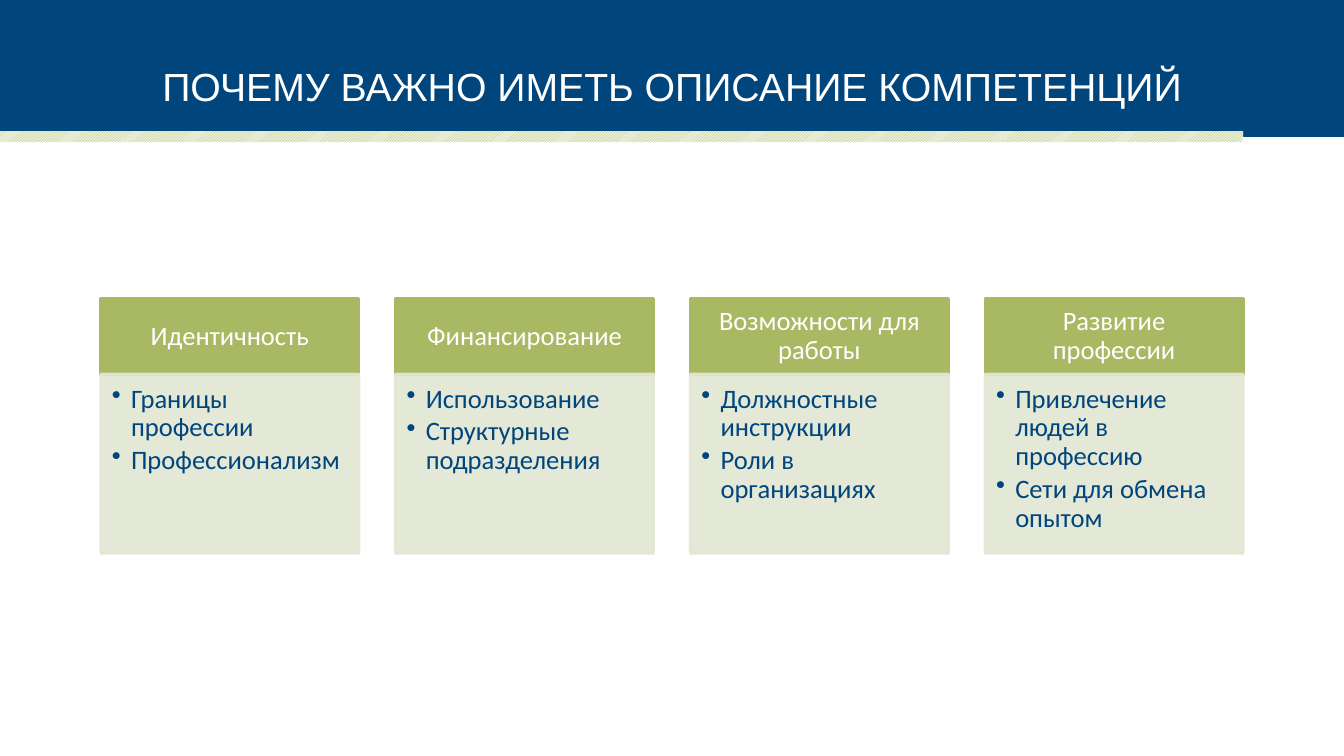
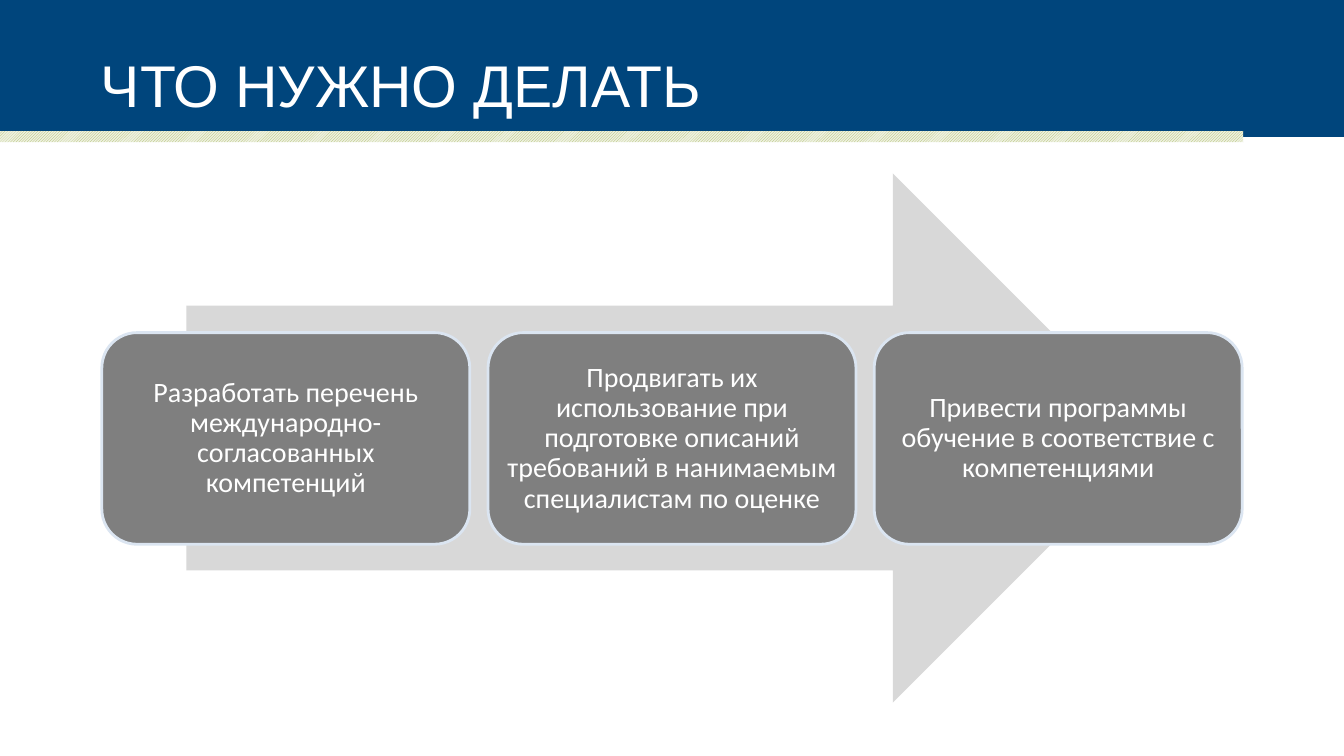
from lxml import etree
from pptx import Presentation
from pptx.dml.color import RGBColor
from pptx.enum.dml import MSO_PATTERN
from pptx.enum.shapes import MSO_SHAPE
from pptx.enum.text import MSO_ANCHOR, MSO_AUTO_SIZE, PP_ALIGN
from pptx.oxml.ns import qn
from pptx.util import Inches, Pt

RECT, ROUND, ARROW = MSO_SHAPE.RECTANGLE, MSO_SHAPE.ROUNDED_RECTANGLE, MSO_SHAPE.RIGHT_ARROW
TOP, MIDDLE = MSO_ANCHOR.TOP, MSO_ANCHOR.MIDDLE
LEFT, CENTER = PP_ALIGN.LEFT, PP_ALIGN.CENTER
FIXED, STRIPES = MSO_AUTO_SIZE.NONE, MSO_PATTERN.DARK_UPWARD_DIAGONAL

NAVY = RGBColor(0x00, 0x45, 0x7C)
OLIVE = RGBColor(0xA9, 0xB8, 0x62)
CREAM = RGBColor(0xEE, 0xF1, 0xE0)
SAGE = RGBColor(0xE2, 0xE6, 0xD3)
SILVER = RGBColor(0xD8, 0xD8, 0xD8)
GRAY = RGBColor(0x7F, 0x7F, 0x7F)
ICE = RGBColor(0xDB, 0xE5, 0xF1)
WHITE = RGBColor(0xFF, 0xFF, 0xFF)

# Page grid, in inches
WIDE, HIGH, EDGE = 13.33, 7.5, 1
SPAN = WIDE - 2 * EDGE

HEAD = {"anchor": MIDDLE, "pads": (0.15, 0.08, 0.15, 0.08), "align": CENTER,
        "size": 19, "color": WHITE}
LIST = {"anchor": TOP, "pads": (0.11, 0.11, 0.15, 0.17), "align": LEFT,
        "size": 19, "color": NAVY, "bullet": "•"}
STEP = {"anchor": MIDDLE, "pads": (0.08,) * 4, "align": CENTER,
        "size": 20, "color": WHITE}


def draw(slide, kind, box, fill, line=None, alpha=None):
    """Add a flat shape; alpha is a percentage for fill and line."""
    shape = slide.shapes.add_shape(kind, *map(Inches, box))
    shape.shadow.inherit = False
    shape.fill.solid()
    shape.fill.fore_color.rgb = fill
    if line is None:
        shape.line.fill.background()
    else:
        shape.line.color.rgb = line
        shape.line.width = Pt(2)
    if alpha:
        for tone in shape.element.spPr.iter(qn("a:srgbClr")):
            etree.SubElement(tone, qn("a:alpha")).set("val", str(alpha * 1000))
    return shape


def write(shape, lines, look):
    """Fill a shape with paragraphs in the given look."""
    frame = shape.text_frame
    frame.word_wrap = True
    frame.vertical_anchor = look["anchor"]
    for side, pad in zip(("left", "top", "right", "bottom"), look["pads"]):
        setattr(frame, "margin_" + side, Inches(pad))
    frame.text = "\n".join(lines)
    for para in frame.paragraphs:
        form = {"alignment": look["align"], "line_spacing": 0.9, "space_after": Pt(3)}
        for name, value in form.items():
            setattr(para, name, value)
        font = para.runs[0].font
        font.name, font.size = "Calibri", Pt(look["size"])
        font.color.rgb = look["color"]
        if "bullet" in look:
            props = para._p.get_or_add_pPr()
            props.set("marL", str(Inches(0.19)))
            props.set("indent", str(-Inches(0.19)))
            etree.SubElement(props, qn("a:buChar")).set("char", look["bullet"])


deck = Presentation()
deck.slide_width, deck.slide_height = Inches(WIDE), Inches(HIGH)

# Shared layout: title place and bands
layout = deck.slide_layouts[5]
title = layout.placeholders[0]
place = {"left": EDGE, "top": 0.53, "width": SPAN, "height": 0.72}
for name, value in place.items():
    setattr(title, name, Inches(value))
frame = title.text_frame
form = {"vertical_anchor": MIDDLE, "auto_size": FIXED, "word_wrap": True,
        "margin_left": 0, "margin_top": 0, "margin_right": 0, "margin_bottom": 0}
for name, value in form.items():
    setattr(frame, name, value)

# Slides with titles
heads = [("ПОЧЕМУ ВАЖНО ИМЕТЬ ОПИСАНИЕ КОМПЕТЕНЦИЙ", 28, CENTER),
         ("ЧТО НУЖНО ДЕЛАТЬ", 42, LEFT)]
for text, size, align in heads:
    slide = deck.slides.add_slide(layout)
    slide.shapes.title.text = text
    para = slide.shapes.title.text_frame.paragraphs[0]
    para.alignment, para.line_spacing = align, 0.85
    font = para.runs[0].font
    font.name, font.size = "Arial", Pt(size)
    font.color.rgb = WHITE
why, todo = deck.slides

# Bands are drawn once, then moved behind the layout's title
band = draw(why, RECT, (0, 0, WIDE, 1.36), NAVY)
strip = draw(why, RECT, (0, 1.3, WIDE - EDGE, 0.11), OLIVE)
strip.fill.patterned()
strip.fill.pattern = STRIPES
strip.fill.fore_color.rgb, strip.fill.back_color.rgb = OLIVE, CREAM
for rank, part in enumerate((band, strip)):
    part.element.nvSpPr.cNvPr.set("id", str(50 + rank))
    layout.shapes.element.insert(2 + rank, part.element)

# Slide 1: four cards
cards = [("Идентичность", ["Границы профессии", "Профессионализм"]),
         ("Финансирование", ["Использование", "Структурные подразделения"]),
         ("Возможности для работы", ["Должностные инструкции", "Роли в организациях"]),
         ("Развитие профессии", ["Привлечение людей в профессию", "Сети для обмена опытом"])]
width = 2.56
pitch = (SPAN - width) / (len(cards) - 1)
for col, (name, points) in enumerate(cards):
    left = EDGE + col * pitch
    write(draw(why, RECT, (left, 2.96, width, 0.76), OLIVE, OLIVE), [name], HEAD)
    write(draw(why, RECT, (left, 3.71, width, 1.78), SAGE, SAGE, 90), points, LIST)

# Slide 2: three steps on an arrow
share = 0.85
draw(todo, ARROW, (EDGE + SPAN * (1 - share) / 2, 1.72, SPAN * share, 5.25), SILVER)
steps = ["Разработать перечень международно-согласованных компетенций",
         "Продвигать их использование при подготовке описаний требований в нанимаемым "
         "специалистам по оценке",
         "Привести программы обучение в соответствие с компетенциями"]
width, gap = 3.65, 0.18
for col, text in enumerate(steps):
    left = EDGE + 0.01 + col * (width + gap)
    write(draw(todo, ROUND, (left, 3.3, width, 2.1), GRAY, ICE), [text], STEP)

deck.save("out.pptx")
